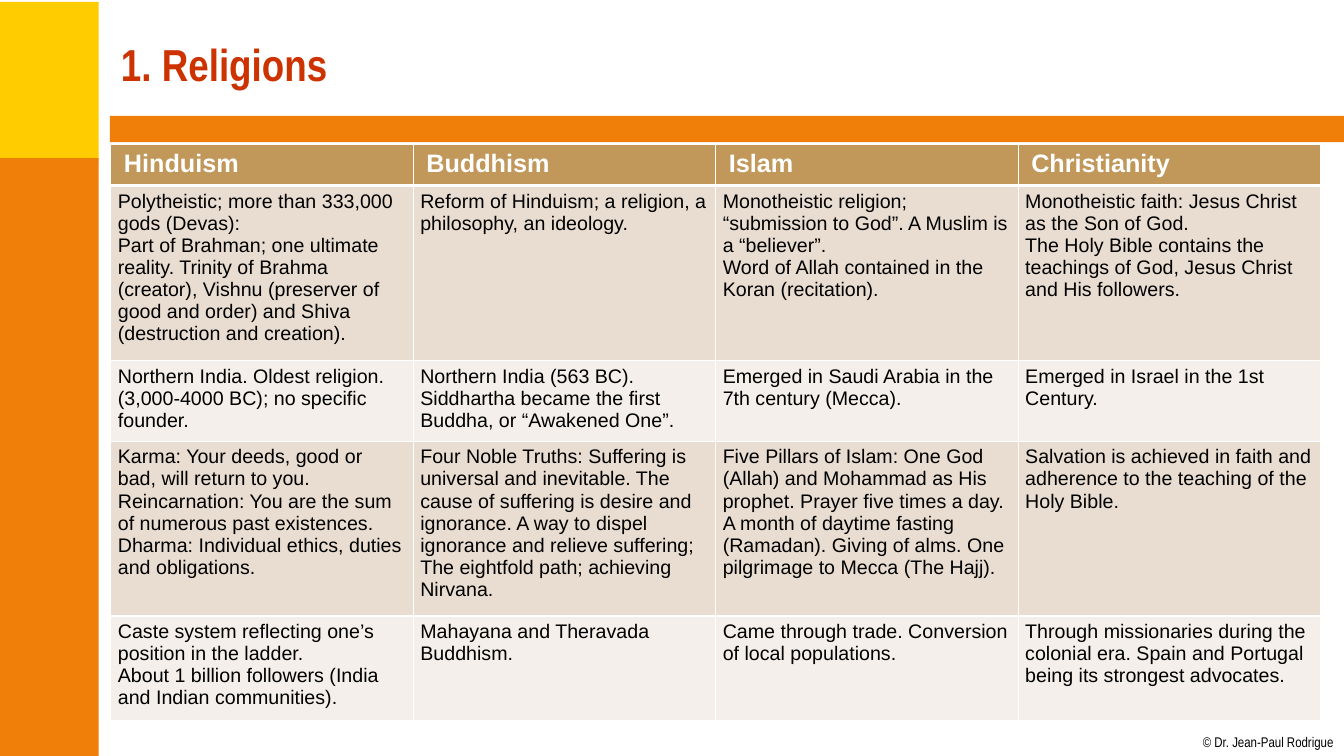
from dataclasses import dataclass

from lxml import etree
from pptx import Presentation
from pptx.dml.color import RGBColor
from pptx.enum.shapes import MSO_SHAPE
from pptx.enum.text import MSO_ANCHOR, MSO_AUTO_SIZE, PP_ALIGN
from pptx.oxml.ns import qn
from pptx.util import Inches, Pt

RECTANGLE = MSO_SHAPE.RECTANGLE
MIDDLE = MSO_ANCHOR.MIDDLE
NO_AUTOFIT = MSO_AUTO_SIZE.NONE
FIT_SHAPE = MSO_AUTO_SIZE.SHAPE_TO_FIT_TEXT
LEFT = PP_ALIGN.LEFT

SLIDE_WIDTH, SLIDE_HEIGHT = Inches(13.33), Inches(7.5)
TITLE_ONLY = 5


@dataclass(frozen=True)
class Theme:
    yellow: str = "FFCC00"
    orange: str = "F07F09"
    title: str = "CC3300"
    header: str = "C19859"
    bands: tuple = ("E9DDD1", "F4EFEA")
    white: str = "FFFFFF"
    black: str = "000000"
    body_font: str = "Arial"
    narrow_font: str = "Arial Narrow"
    title_size: int = 32
    header_size: int = 18
    body_size: int = 14
    credit_size: int = 10
    rule: int = 1
    header_rule: int = 3


THEME = Theme()

# Places are percentages of the slide: left, top, width, height.
PANELS = [
    ((-0.15, 0.27, 7.5, 21.07), THEME.yellow),
    ((-0.15, 20.93, 7.5, 79.07), THEME.orange),
    ((8.18, 15.33, 91.82, 3.47), THEME.orange),
]
TITLE_PLACE = (8.25, 1.47, 90.02, 13.87)
TABLE_PLACE = (8.25, 19.07, 90.02, 66.8)
CREDIT_PLACE = (89.5, 97.07, 9.83, 2.27)
MINIMUM_ROW = 5.47

HEADINGS = ["Hinduism", "Buddhism", "Islam", "Christianity"]
# One row per theme; a line feed starts a new paragraph.
ROWS = [
    ["Polytheistic; more than 333,000 gods (Devas):\n"
     "Part of Brahman; one ultimate reality. Trinity of Brahma (creator), Vishnu "
     "(preserver of good and order) and Shiva (destruction and creation).",
     "Reform of Hinduism; a religion, a philosophy, an ideology.",
     "Monotheistic religion; “submission to God”. A Muslim is a “believer”.\n"
     "Word of Allah contained in the Koran (recitation).",
     "Monotheistic faith: Jesus Christ as the Son of God.\n"
     "The Holy Bible contains the teachings of God, Jesus Christ and His followers."],
    ["Northern India. Oldest religion. (3,000-4000 BC); no specific founder.",
     "Northern India (563 BC). Siddhartha became the first Buddha, or “Awakened One”.",
     "Emerged in Saudi Arabia in the 7th century (Mecca).",
     "Emerged in Israel in the 1st Century."],
    ["Karma: Your deeds, good or bad, will return to you.\n"
     "Reincarnation: You are the sum of numerous past existences. "
     "Dharma: Individual ethics, duties and obligations.",
     "Four Noble Truths: Suffering is universal and inevitable. The cause of suffering "
     "is desire and ignorance. A way to dispel ignorance and relieve suffering; "
     "The eightfold path; achieving Nirvana.",
     "Five Pillars of Islam: One God (Allah) and Mohammad as His prophet. Prayer five "
     "times a day. A month of daytime fasting (Ramadan). Giving of alms. "
     "One pilgrimage to Mecca (The Hajj).",
     "Salvation is achieved in faith and adherence to the teaching of the Holy Bible."],
    ["Caste system reflecting one’s position in the ladder.\n"
     "About 1 billion followers (India and Indian communities).",
     "Mahayana and Theravada Buddhism.",
     "Came through trade. Conversion of local populations.",
     "Through missionaries during the colonial era. Spain and Portugal being its "
     "strongest advocates."],
]


def to_lengths(place):
    """Turn percentages of the slide into left, top, width and height."""
    sides = (SLIDE_WIDTH, SLIDE_HEIGHT) * 2
    return [round(side * share / 100) for side, share in zip(sides, place)]


def write_text(frame, text, font_name, size, color, bold=False):
    frame.text = text
    for para in frame.paragraphs:
        para.alignment = LEFT
        para.font.name = font_name
        para.font.size = Pt(size)
        para.font.bold = bold
        para.font.color.rgb = RGBColor.from_string(color)


def add_panel(page, place, color):
    panel = page.shapes.add_shape(RECTANGLE, *to_lengths(place))
    panel.shadow.inherit = False
    panel.fill.solid()
    panel.fill.fore_color.rgb = RGBColor.from_string(color)
    panel.line.fill.background()


def add_title(page, text):
    title = page.shapes.title
    title.left, title.top, title.width, title.height = to_lengths(TITLE_PLACE)
    frame = title.text_frame
    frame.auto_size = NO_AUTOFIT
    frame.vertical_anchor = MIDDLE
    write_text(frame, text, THEME.narrow_font, THEME.title_size, THEME.title, bold=True)


def add_credit(page, text):
    frame = page.shapes.add_textbox(*to_lengths(CREDIT_PLACE)).text_frame
    frame.margin_left = frame.margin_top = frame.margin_right = frame.margin_bottom = 0
    frame.word_wrap = False
    frame.auto_size = FIT_SHAPE
    write_text(frame, text, THEME.narrow_font, THEME.credit_size, THEME.black)


def add_borders(cell, top, bottom):
    """Rule all four sides in white; the widths of top and bottom are in points."""
    properties = cell._tc.get_or_add_tcPr()
    widths = {"lnL": THEME.rule, "lnR": THEME.rule, "lnT": top, "lnB": bottom}
    for position, (side, width) in enumerate(widths.items()):
        line = etree.Element(qn(f"a:{side}"), w=str(Pt(width)))
        fill = etree.SubElement(line, qn("a:solidFill"))
        etree.SubElement(fill, qn("a:srgbClr"), val=THEME.white)
        properties.insert(position, line)


def format_cell(cell, text, row):
    is_header = row == 0
    cell.margin_left = cell.margin_right = Inches(0.13 if is_header else 0.07)
    cell.margin_top = cell.margin_bottom = Inches(0.05)
    cell.fill.solid()
    color = THEME.header if is_header else THEME.bands[(row - 1) % 2]
    cell.fill.fore_color.rgb = RGBColor.from_string(color)
    add_borders(cell,
                top=THEME.header_rule if row == 1 else THEME.rule,
                bottom=THEME.header_rule if is_header else THEME.rule)
    write_text(cell.text_frame, text, THEME.body_font,
               THEME.header_size if is_header else THEME.body_size,
               THEME.white if is_header else THEME.black, bold=is_header)


def add_comparison(page, rows):
    lengths = to_lengths(TABLE_PLACE)
    holder = page.shapes.add_table(len(rows), len(rows[0]), *lengths)
    table = holder.table
    for row, texts in enumerate(rows):
        table.rows[row].height = round(SLIDE_HEIGHT * MINIMUM_ROW / 100)
        for column, text in enumerate(texts):
            format_cell(table.cell(row, column), text, row)
    holder.height = lengths[3]


def main():
    deck = Presentation()
    deck.slide_width, deck.slide_height = SLIDE_WIDTH, SLIDE_HEIGHT
    page = deck.slides.add_slide(deck.slide_layouts[TITLE_ONLY])
    for place, color in PANELS:
        add_panel(page, place, color)
    add_credit(page, "© Dr. Jean-Paul Rodrigue")
    add_title(page, "1. Religions")
    add_comparison(page, [HEADINGS] + ROWS)
    deck.save("out.pptx")


if __name__ == "__main__":
    main()
